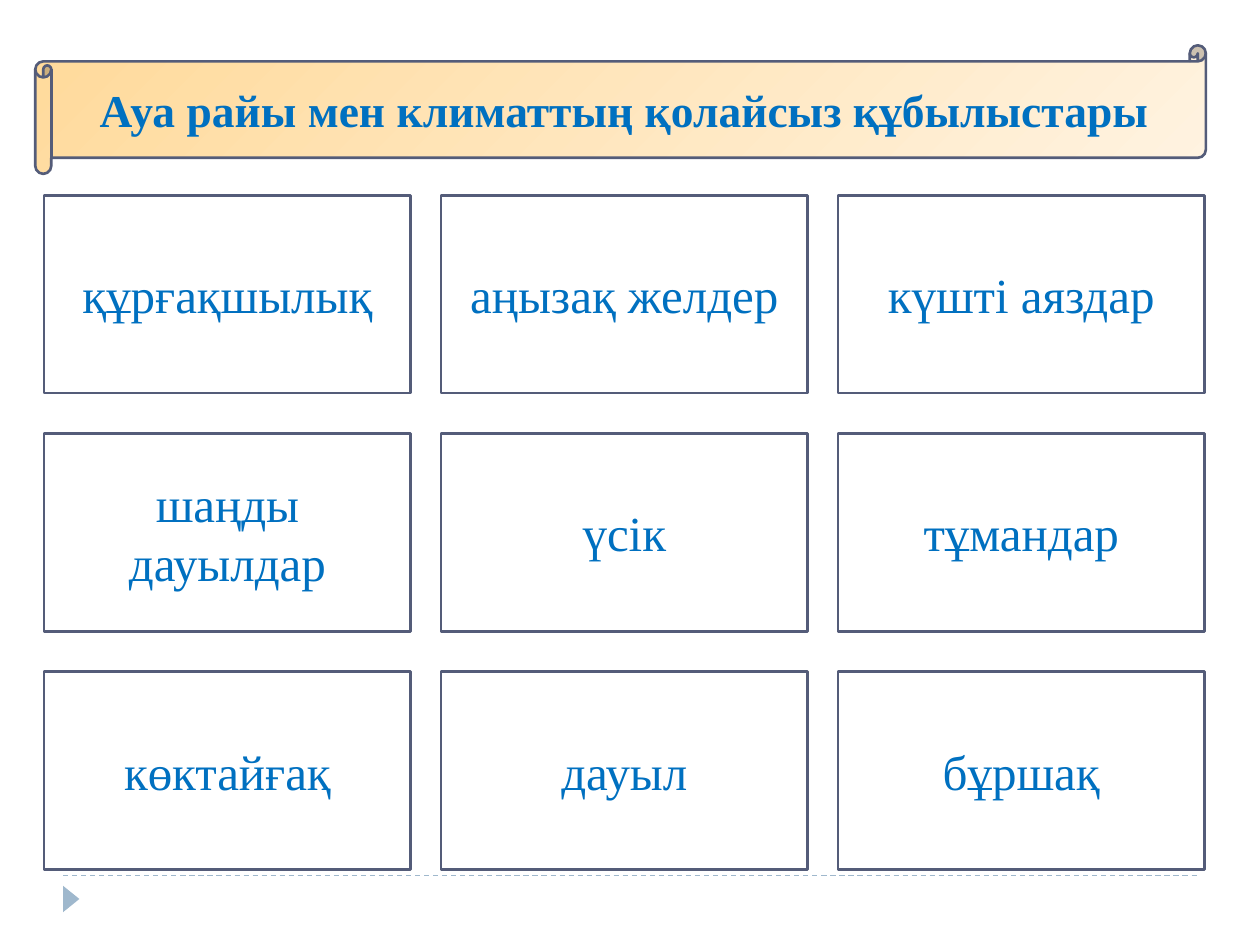
from pptx import Presentation
from pptx.dml.color import RGBColor
from pptx.enum.dml import MSO_LINE
from pptx.enum.shapes import MSO_CONNECTOR, MSO_SHAPE
from pptx.enum.text import MSO_ANCHOR, PP_ALIGN
from pptx.oxml.ns import qn
from pptx.util import Inches, Pt
from lxml.etree import SubElement

BLUE = RGBColor(0x00, 0x70, 0xC0)
SLATE = RGBColor(0x54, 0x5C, 0x79)
MIST = RGBColor(0x9F, 0xB8, 0xCD)
WHITE = RGBColor(0xFF, 0xFF, 0xFF)
SAND = RGBColor(0xFF, 0xDA, 0x9B)
CREAM = RGBColor(0xFF, 0xF3, 0xE1)

TITLE = "Ауа райы мен климаттың қолайсыз құбылыстары"
ROWS = [
    ["құрғақшылық", "аңызақ желдер", "күшті аяздар"],
    ["шаңды дауылдар", "үсік", "тұмандар"],
    ["көктайғақ", "дауыл", "бұршақ"],
]


class Deck:
    """Draws styled elements on the current slide."""

    face = {"name": "Times New Roman"}
    head = {"size": Pt(26), "bold": True}
    body = {"size": Pt(28), "bold": False}

    def __init__(self, slide):
        self.slide = slide

    def shape(self, kind, x, y, w, h):
        item = self.slide.shapes.add_shape(
            kind, Inches(x), Inches(y), Inches(w), Inches(h))
        item.shadow.inherit = False
        return item

    def label(self, item, text, style):
        item.line.color.rgb = SLATE
        item.line.width = Pt(1.5)
        frame = item.text_frame
        frame.word_wrap = True
        frame.vertical_anchor = MSO_ANCHOR.MIDDLE
        para = frame.paragraphs[0]
        para.alignment = PP_ALIGN.CENTER
        run = para.add_run()
        run.text = text
        for key, value in {**self.face, **style}.items():
            setattr(run.font, key, value)
        run.font.color.rgb = BLUE

    def scroll(self, text, x, y, w, h):
        item = self.shape(MSO_SHAPE.HORIZONTAL_SCROLL, x, y, w, h)
        item.fill.gradient()
        item.fill.gradient_angle = 315
        for stop, color in zip(item.fill.gradient_stops, (SAND, CREAM)):
            stop.color.rgb = color
        self.label(item, text, self.head)

    def card(self, text, x, y, w, h):
        item = self.shape(MSO_SHAPE.RECTANGLE, x, y, w, h)
        item.fill.solid()
        item.fill.fore_color.rgb = WHITE
        self.label(item, text, self.body)

    def rule(self, x, y, end):
        item = self.slide.shapes.add_connector(
            MSO_CONNECTOR.STRAIGHT, Inches(x), Inches(y), Inches(end), Inches(y))
        for key, value in {"width": Pt(0.75), "dash_style": MSO_LINE.DASH}.items():
            setattr(item.line, key, value)
        item.line.color.rgb = MIST
        SubElement(item._element.spPr, qn("a:effectLst"))

    def arrow(self, x, y, w, h):
        item = self.shape(MSO_SHAPE.ISOSCELES_TRIANGLE, x, y, w, h)
        item.rotation = 90
        item.fill.solid()
        item.fill.fore_color.rgb = MIST
        item.line.fill.background()


def main():
    show = Presentation()
    show.slide_width, show.slide_height = Inches(10), Inches(7.5)
    deck = Deck(show.slides.add_slide(show.slide_layouts[6]))
    deck.rule(0.5, 6.95, 9.5)
    deck.arrow(0.46, 7.07, 0.21, 0.13)
    deck.scroll(TITLE, 0.28, 0.36, 9.29, 1.02)
    for row, words in enumerate(ROWS):
        for col, word in enumerate(words):
            deck.card(word, 0.35 + 3.15 * col, 1.55 + 1.89 * row, 2.91, 1.57)
    show.save("out.pptx")


if __name__ == "__main__":
    main()
